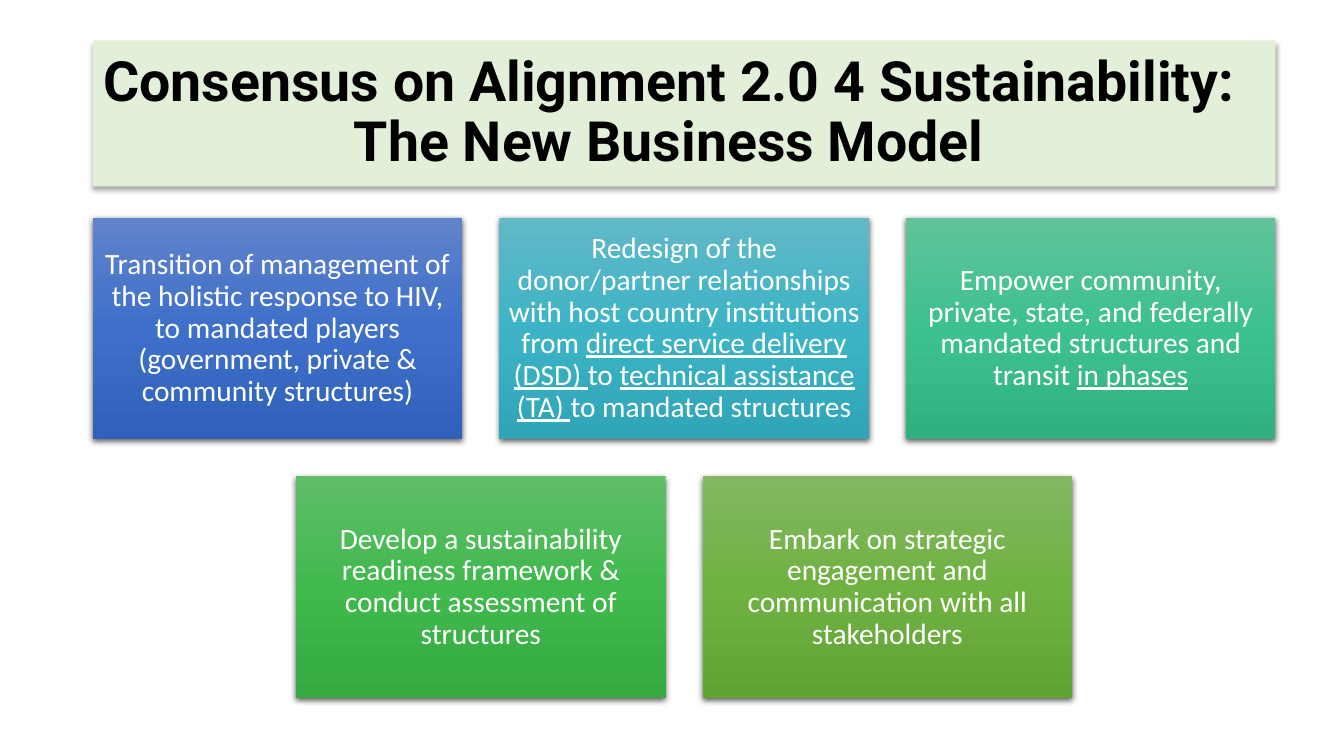
from lxml import etree
from pptx import Presentation
from pptx import util as u
from pptx.dml.color import RGBColor
from pptx.enum import shapes, text
from pptx.oxml import parse_xml
from pptx.oxml.ns import qn, nsdecls

COLORS = {
    "title_fill": "E2F0D9", "title_text": "000000", "card_text": "FFFFFF",
    "blue": ("6183CB", "3E70CA", "3062BB"),
    "teal": ("61B8C7", "3DB4C6", "30A5B7"),
    "mint": ("60C39A", "3DC18F", "31B080"),
    "green": ("60BE68", "40B94D", "34AA41"),
    "olive": ("81B861", "6FB242", "62A336"),
}

# Each card: gradient name, then text pieces; every second piece is underlined
CARD_ROWS = [
    [
        ("blue", ["Transition of management of the holistic response to HIV, to mandated "
                  "players (government, private & community structures)"]),
        ("teal", ["Redesign of the donor/partner relationships with host country institutions from ",
                  "direct service delivery (DSD) ", "to ", "technical assistance (TA) ",
                  "to mandated structures"]),
        ("mint", ["Empower community, private, state, and federally mandated structures and transit ",
                  "in phases"]),
    ],
    [
        ("green", ["Develop a sustainability readiness framework & conduct assessment of structures"]),
        ("olive", ["Embark on strategic engagement and communication with all stakeholders"]),
    ],
]


def add_shadow(sp, opacity, blur, distance):
    """Add a soft shadow that falls straight down."""
    sp.shadow.inherit = False
    effects = sp._element.spPr.find(qn("a:effectLst"))
    shadow = etree.SubElement(effects, qn("a:outerShdw"), blurRad=str(u.Pt(blur)),
                              dist=str(u.Pt(distance)), dir="5400000", rotWithShape="0")
    color = etree.SubElement(shadow, qn("a:srgbClr"), val="000000")
    etree.SubElement(color, qn("a:alpha"), val=str(opacity * 1000))


def fill_gradient(sp, stops):
    """Fill from top to bottom with evenly spaced colours."""
    step = 100000 // (len(stops) - 1)
    stop_xml = "".join(f'<a:gs pos="{i * step}"><a:srgbClr val="{stop}"/></a:gs>'
                       for i, stop in enumerate(stops))
    sp._element.spPr.find(qn("a:prstGeom")).addnext(parse_xml(
        f'<a:gradFill {nsdecls("a")} rotWithShape="1"><a:gsLst>{stop_xml}</a:gsLst>'
        '<a:lin ang="5400000" scaled="0"/></a:gradFill>'))


def write_text(sp, pieces, size, font, color, bold=False, insets=(0.09, 0.09, 0.09, 0.09)):
    """Write one centred paragraph, underlining every second piece."""
    tf = sp.text_frame
    tf.word_wrap = True
    tf.auto_size = text.MSO_AUTO_SIZE.NONE
    tf.vertical_anchor = text.MSO_ANCHOR.MIDDLE
    tf.margin_left, tf.margin_top, tf.margin_right, tf.margin_bottom = map(u.Inches, insets)
    p = tf.paragraphs[0]
    p.alignment = text.PP_ALIGN.CENTER
    p.line_spacing = 0.9
    for i, piece in enumerate(pieces):
        if piece == "\v":
            p.add_line_break()
            continue
        r = p.add_run()
        r.text = piece
        r.font.size = u.Pt(size)
        r.font.name = font
        r.font.bold = bold
        r.font.underline = i % 2 == 1
        r.font.color.rgb = RGBColor.from_string(color)


def build_title(slide, x, y, w, h):
    sp = slide.shapes.title
    sp.left, sp.top, sp.width, sp.height = map(u.Inches, (x, y, w, h))
    sp.fill.solid()
    sp.fill.fore_color.rgb = RGBColor.from_string(COLORS["title_fill"])
    add_shadow(sp, 32, 3.5, 2.2)
    write_text(sp, ["Consensus on Alignment 2.0 4 Sustainability:", "\v", "The New Business Model"],
               39.6, "Roboto", COLORS["title_text"], bold=True, insets=(0, 0.05, 0.3, 0.05))


def build_card(slide, x, y, w, h, gradient, pieces):
    sp = slide.shapes.add_shape(shapes.MSO_SHAPE.RECTANGLE, *map(u.Inches, (x, y, w, h)))
    sp.line.fill.background()
    fill_gradient(sp, COLORS[gradient])
    add_shadow(sp, 63, 4.5, 1.5)
    write_text(sp, pieces, 21, "Calibri", COLORS["card_text"])


def build_cards(slide, x, y, w):
    """Lay out centred rows; gaps are a tenth of a card's width."""
    columns = max(len(row) for row in CARD_ROWS)
    card_w = w / (columns * 1.1 - 0.1)
    card_h, gap = card_w * 0.6, card_w * 0.1
    for i, row in enumerate(CARD_ROWS):
        row_w = len(row) * (card_w + gap) - gap
        left = x + (w - row_w) / 2
        for j, (gradient, pieces) in enumerate(row):
            build_card(slide, left + j * (card_w + gap), y + i * (card_h + gap),
                       card_w, card_h, gradient, pieces)


def main():
    prs = Presentation()
    prs.slide_width, prs.slide_height = u.Inches(13.33), u.Inches(7.5)
    slide = prs.slides.add_slide(prs.slide_layouts[5])
    margin, content_w = 0.92, 11.73
    build_title(slide, margin, 0.4, content_w, 1.45)
    build_cards(slide, margin, 2.16, content_w)
    prs.save("out.pptx")


if __name__ == "__main__":
    main()
